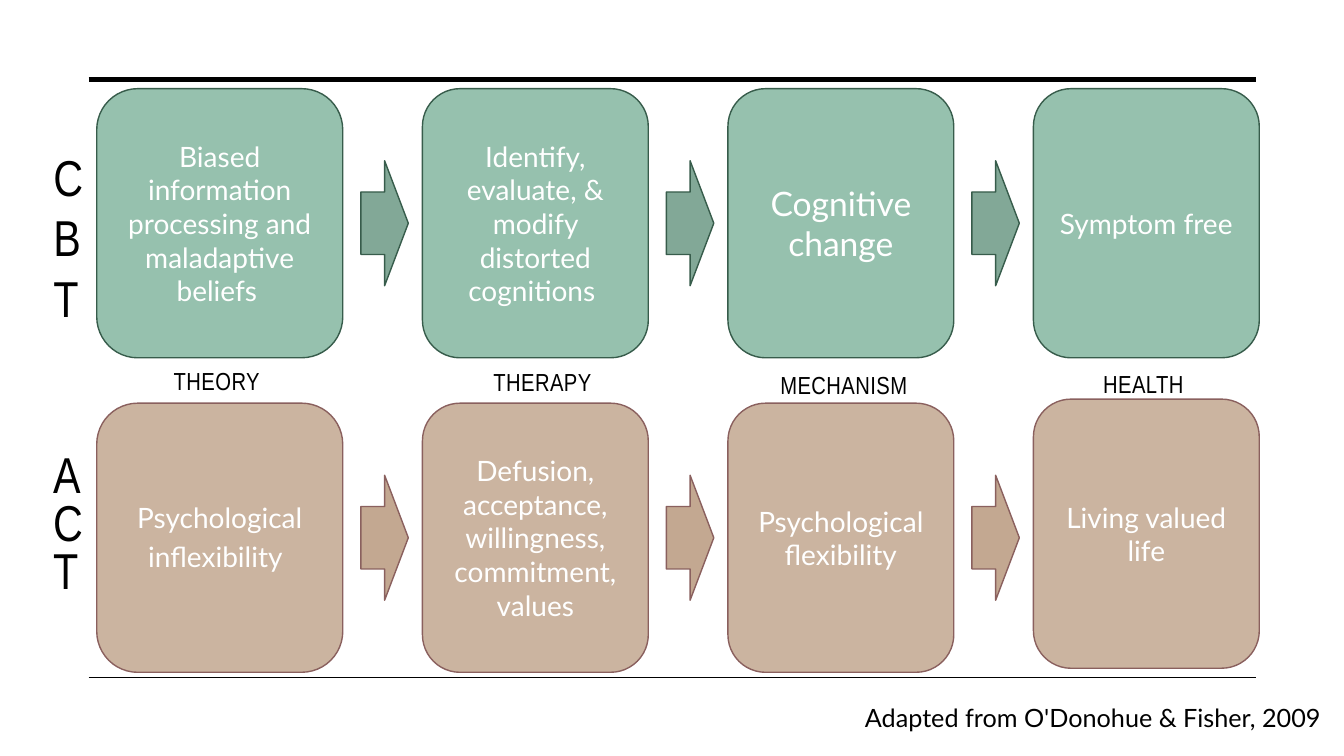
from pptx import Presentation
from pptx.dml.color import RGBColor
from pptx.enum.shapes import MSO_CONNECTOR, MSO_SHAPE
from pptx.enum.text import MSO_ANCHOR, PP_ALIGN
from pptx.oxml.ns import qn
from pptx.util import Inches, Pt

# Content
NARROW, BODY = "Arial Narrow", "Lato"
RULES = [(0.79, 3.5), (6.72, 1)]  # height, weight
# Therapy name, name box, line spacing
NAMES = [
    ("CBT", (0.43, 1.4, 0.45, 1.96), 1.0),
    ("ACT", (0.43, 4.46, 0.67, 1.69), 0.8),
]
# Row top, box fill, arrow fill, outline
ROWS = [
    (0.88, "96C1AE", "82A897", "375C4B"),
    (4.0, "CBB4A0", "C3A891", "8A605E"),
]
# Stage label, label left and top, then (text, size, closing space size) per row
STAGES = [
    ("THEORY", 1.31, 3.58,
     [("Biased information processing and maladaptive beliefs", 20, 16),
      ("Psychological inflexibility", 20, 24)]),
    ("THERAPY", 4.54, 3.59,
     [("Identify, evaluate, & modify distorted cognitions", 20, 20),
      ("Defusion, acceptance, willingness, commitment, values", 20, None)]),
    ("MECHANISM", 7.53, 3.62,
     [("Cognitive change", 24, None),
      ("Psychological flexibility", 20, None)]),
    ("HEALTH", 10.5, 3.61,
     [("Symptom free", 20, None),
      ("Living valued life", 20, None)]),
]
SOURCE = "Adapted from O'Donohue & Fisher, 2009"

# Grid
BOX_W, BOX_H, FIRST_W = 2.24, 2.67, 2.44
FIRST_X, SECOND_X, STEP = 0.96, 4.19, 3.03
ARROW_W, ARROW_H, ARROW_BACK = 0.47, 1.24, 0.61
HEALTH_RISE = 0.04  # the last lower box sits slightly higher

deck = Presentation()
deck.slide_width, deck.slide_height = Inches(13.33), Inches(7.5)
page = deck.slides.add_slide(deck.slide_layouts[6])


def color(value):
    return RGBColor.from_string(value)


def write(shape, text, size=20, font=BODY, ink="000000", align=PP_ALIGN.LEFT,
          anchor=MSO_ANCHOR.TOP, spacing=None, tracking=None, tail=None):
    frame = shape.text_frame
    frame.word_wrap = True
    frame.vertical_anchor = anchor
    para = frame.paragraphs[0]
    para.alignment = align
    para.line_spacing = spacing
    pieces = [(text, size)] + ([("\N{NO-BREAK SPACE}", tail)] if tail else [])
    for piece, points in pieces:
        span = para.add_run()
        span.text = piece
        span.font.size = Pt(points)
        span.font.name = font
        span.font.color.rgb = color(ink)
        if tracking:
            span.font._element.set("spc", str(round(tracking * 100)))


def add_text(place, text, **style):
    box = page.shapes.add_textbox(*map(Inches, place))
    write(box, text, **style)


def add_block(kind, place, fill, outline):
    block = page.shapes.add_shape(kind, *map(Inches, place))
    block.shadow.inherit = False
    block.fill.solid()
    block.fill.fore_color.rgb = color(fill)
    block.line.color.rgb = color(outline)
    block.line.width = Pt(1)
    return block


# Rules above and below
for height, weight in RULES:
    rule = page.shapes.add_connector(
        MSO_CONNECTOR.STRAIGHT,
        Inches(0.88), Inches(height), Inches(12.46), Inches(height))
    rule.line.color.rgb = color("000000")
    rule.line.width = Pt(weight)
    properties = rule._element.spPr
    properties.append(properties.makeelement(qn("a:effectLst"), {}))

# Therapy names, one letter per line in a narrow box
for name, place, spacing in NAMES:
    add_text(place, name, size=36, font=NARROW, spacing=spacing, tracking=0.3)

# Stages: a box per row, an arrow leading in, a label between the rows
for column, (label, label_x, label_y, cells) in enumerate(STAGES):
    left = SECOND_X + (column - 1) * STEP if column else FIRST_X
    width = BOX_W if column else FIRST_W
    for (top, fill, arrow_fill, outline), (text, size, tail) in zip(ROWS, cells):
        lifted = label == "HEALTH" and top == ROWS[1][0]
        box_top = top - HEALTH_RISE if lifted else top
        box = add_block(MSO_SHAPE.ROUNDED_RECTANGLE,
                        (left, box_top, width, BOX_H), fill, outline)
        write(box, text, size=size, ink="FFFFFF", align=PP_ALIGN.CENTER,
              anchor=MSO_ANCHOR.MIDDLE, tail=tail)
        if column:
            arrow_top = top + (BOX_H - ARROW_H) / 2
            add_block(MSO_SHAPE.RIGHT_ARROW,
                      (left - ARROW_BACK, arrow_top, ARROW_W, ARROW_H),
                      arrow_fill, outline)
    add_text((label_x, label_y, 1.68, 0.76), label, size=17.6, font=NARROW,
             align=PP_ALIGN.CENTER, tracking=0.3)

# Source line
add_text((8.48, 6.92, 4.85, 0.4), SOURCE, size=18)

deck.save("out.pptx")
